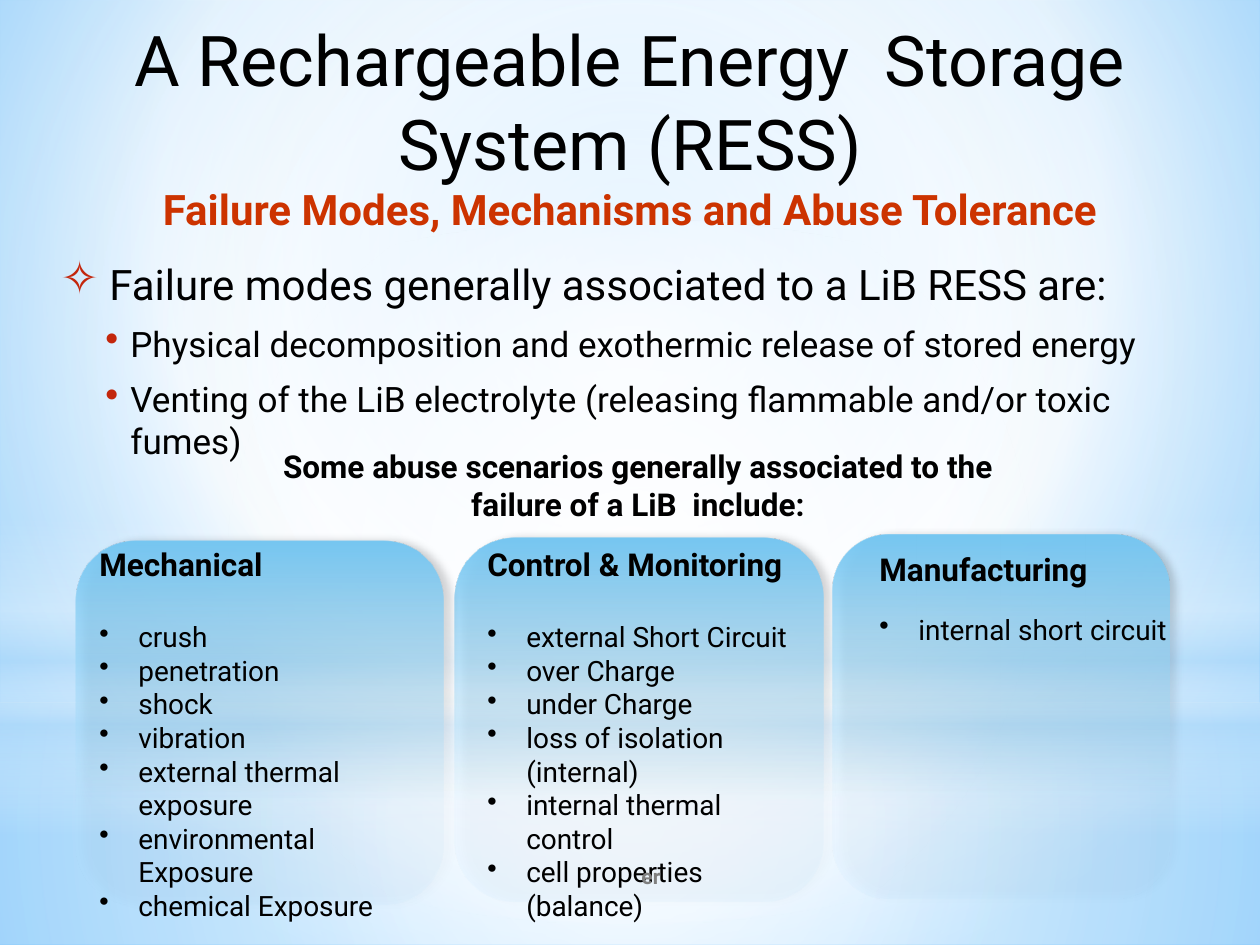
from dataclasses import dataclass

from pptx import Presentation
from pptx import util as u
from pptx.dml import color
from pptx.enum import shapes, text
from pptx.oxml import parse_xml
from pptx.oxml.ns import nsdecls, qn

SCALE = 914400 / 126
SHAPE = shapes.MSO_SHAPE
ALIGN = text.PP_ALIGN


def px(n):
    return u.Emu(round(n * SCALE))


@dataclass
class Theme:
    font: str = "Roboto"
    ink: str = "000000"
    red: str = "CC3300"
    mark: str = "C3260C"
    grey: str = "808080"
    white: str = "FFFFFF"
    pale: str = "B4DCFA"
    card_top: str = "76C6F1"
    card_low: str = "B1E2FD"
    title: int = 40
    lead: int = 24
    point: int = 20
    head: int = 18
    item: int = 16
    small: int = 12


def blend(stops, focus=None):
    """Gradient XML from (place, colour, opacity) stops: radial to focus, else downward."""
    marks = "".join(
        f'<a:gs pos="{at * 1000}"><a:srgbClr val="{tint}">'
        f'<a:alpha val="{solid * 1000}"/></a:srgbClr></a:gs>'
        for at, tint, solid in stops)
    if focus:
        rect = " ".join(f'{side}="{n * 1000}"' for side, n in zip("ltrb", focus))
        way = f'<a:path path="circle"><a:fillToRect {rect}/></a:path>'
    else:
        way = '<a:lin ang="5400000" scaled="0"/>'
    return parse_xml(f'<a:gradFill {nsdecls("a")} rotWithShape="1">'
                     f'<a:gsLst>{marks}</a:gsLst>{way}</a:gradFill>')


def swap_fill(owner, grad):
    owner.replace(owner.find(qn("a:solidFill")), grad)


class Deck:
    def __init__(self, theme):
        self.theme = theme
        self.file = Presentation()
        self.file.slide_width, self.file.slide_height = px(1260), px(945)
        self.slide = self.file.slides.add_slide(self.file.slide_layouts[6])

    def ground(self, stops, focus):
        self.slide.background.fill.solid()
        swap_fill(self.slide._element.find(".//" + qn("p:bgPr")), blend(stops, focus))

    def panel(self, kind, box, stops, focus=None):
        shape = self.slide.shapes.add_shape(kind, *map(px, box))
        shape.shadow.inherit = False
        shape.fill.solid()
        swap_fill(shape._element.spPr, blend(stops, focus))
        shape.line.fill.background()
        return shape

    def card(self, box):
        t = self.theme
        shape = self.panel(SHAPE.ROUNDED_RECTANGLE, box,
                           [(0, t.card_top, 100), (72, t.card_low, 9)])
        shape._element.spPr.find(qn("a:effectLst")).append(parse_xml(
            f'<a:outerShdw {nsdecls("a")} blurRad="63500" dist="50800" dir="0" '
            f'rotWithShape="0"><a:srgbClr val="{t.ink}"><a:alpha val="20000"/>'
            '</a:srgbClr></a:outerShdw>'))

    def frame(self, box, anchor=text.MSO_ANCHOR.TOP):
        frame = self.slide.shapes.add_textbox(*map(px, box)).text_frame
        frame.word_wrap = True
        frame.vertical_anchor = anchor
        return frame

    def line(self, frame, words, size, tint=None, bold=False, align=ALIGN.LEFT):
        """Fill the frame's empty first paragraph, or add the next one."""
        para = frame.paragraphs[-1]
        if para.text:
            para = frame.add_paragraph()
        para.text = words
        para.alignment = align
        for run in para.runs:
            run.font.name = self.theme.font
            run.font.size = u.Pt(size)
            run.font.bold = bold
            run.font.color.rgb = color.RGBColor.from_string(tint or self.theme.ink)
        return para

    def bullet(self, para, sign, left, hang, tint=None, ratio=100):
        props = para._p.get_or_add_pPr()
        props.set("marL", str(px(left)))
        props.set("indent", str(-px(hang)))
        for part in (f'buClr {{}}><a:srgbClr val="{tint or self.theme.ink}"/></a:buClr>',
                     f'buSzPct {{}} val="{ratio * 1000}"/>',
                     f'buChar {{}} char="{sign}"/>'):
            props.append(parse_xml("<a:" + part.format(nsdecls("a"))))

    def label(self, box, words, size, tint=None, bold=False, anchor=text.MSO_ANCHOR.TOP):
        return self.line(self.frame(box, anchor), words, size, tint, bold, ALIGN.CENTER)

    def points(self, box, rows):
        """Body rows of (words, size, sign, left, hang)."""
        frame = self.frame(box)
        for i, (words, size, sign, left, hang) in enumerate(rows):
            para = self.line(frame, words, size)
            self.bullet(para, sign, left, hang, self.theme.mark, 110)
            para.space_after = u.Pt(4)
            if i:
                para.space_before = u.Pt(3.8)

    def group(self, box, head, gap, items):
        frame = self.frame(box)
        self.line(frame, head, self.theme.head, bold=True).space_after = u.Pt(gap)
        for item in items:
            self.bullet(self.line(frame, item, self.theme.item), "•", 39, 39)


def main():
    t = Theme()
    deck = Deck(t)
    mid = (50, 50, 50, 50)
    deck.ground([(0, "9ED5FF", 100), (60, t.white, 100), (100, "5BB9FF", 100)],
                (20, 10, 20, 60))
    deck.panel(SHAPE.RECTANGLE, (0, 703, 1260, 242),
               [(0, t.white, 91), (37, t.white, 76), (100, t.pale, 79)], mid)
    deck.panel(SHAPE.RECTANGLE, (0, 0, 1260, 703),
               [(0, t.white, 89), (48, t.white, 62), (100, t.pale, 79)], mid)
    deck.panel(SHAPE.RECTANGLE, (0, 519, 1260, 315),
               [(0, t.white, 0), (29, t.white, 30), (45, t.pale, 40),
                (55, t.white, 26), (65, t.pale, 60), (100, t.white, 0)])
    deck.panel(SHAPE.OVAL, (0, 220, 1260, 703),
               [(0, t.white, 100), (56, t.white, 0)], mid)

    for left, top, width in ((455, 538, 368), (833, 535, 336), (76, 541, 368)):
        deck.card((left, top, width, 363))

    deck.points((42, 252, 1165, 325), [
        ("Failure modes generally associated to a LiB RESS are:", t.lead, "✧", 55, 49),
        ("Physical decomposition and exothermic release of stored energy",
         t.point, "•", 76, 25),
        ("Venting of the LiB electrolyte (releasing flammable and/or toxic fumes)",
         t.point, "•", 76, 25)])
    deck.label((0, 189, 1260, 52), "Failure Modes, Mechanisms and Abuse Tolerance",
               t.lead, t.red, True).line_spacing = u.Pt(22)
    deck.group((475, 539, 339, 394), "Control & Monitoring", 21, [
        "external Short Circuit", "over Charge", "under Charge",
        "loss of isolation (internal)", "internal thermal control",
        "cell properties (balance)"])
    deck.group((867, 544, 330, 111), "Manufacturing", 14, ["internal short circuit"])
    deck.label((239, 441, 798, 127), "Some abuse scenarios generally associated to the "
               "failure of a LiB  include:", t.head, bold=True)
    deck.group((87, 539, 345, 394), "Mechanical", 21, [
        "crush", "penetration", "shock", "vibration", "external thermal exposure",
        "environmental Exposure", "chemical Exposure"])
    deck.label((0, 10, 1260, 267), "A Rechargeable Energy  Storage System (RESS)", t.title)
    deck.label((525, 851, 252, 50), "er", t.small, t.grey, True, text.MSO_ANCHOR.MIDDLE)
    deck.file.save("out.pptx")


if __name__ == "__main__":
    main()
